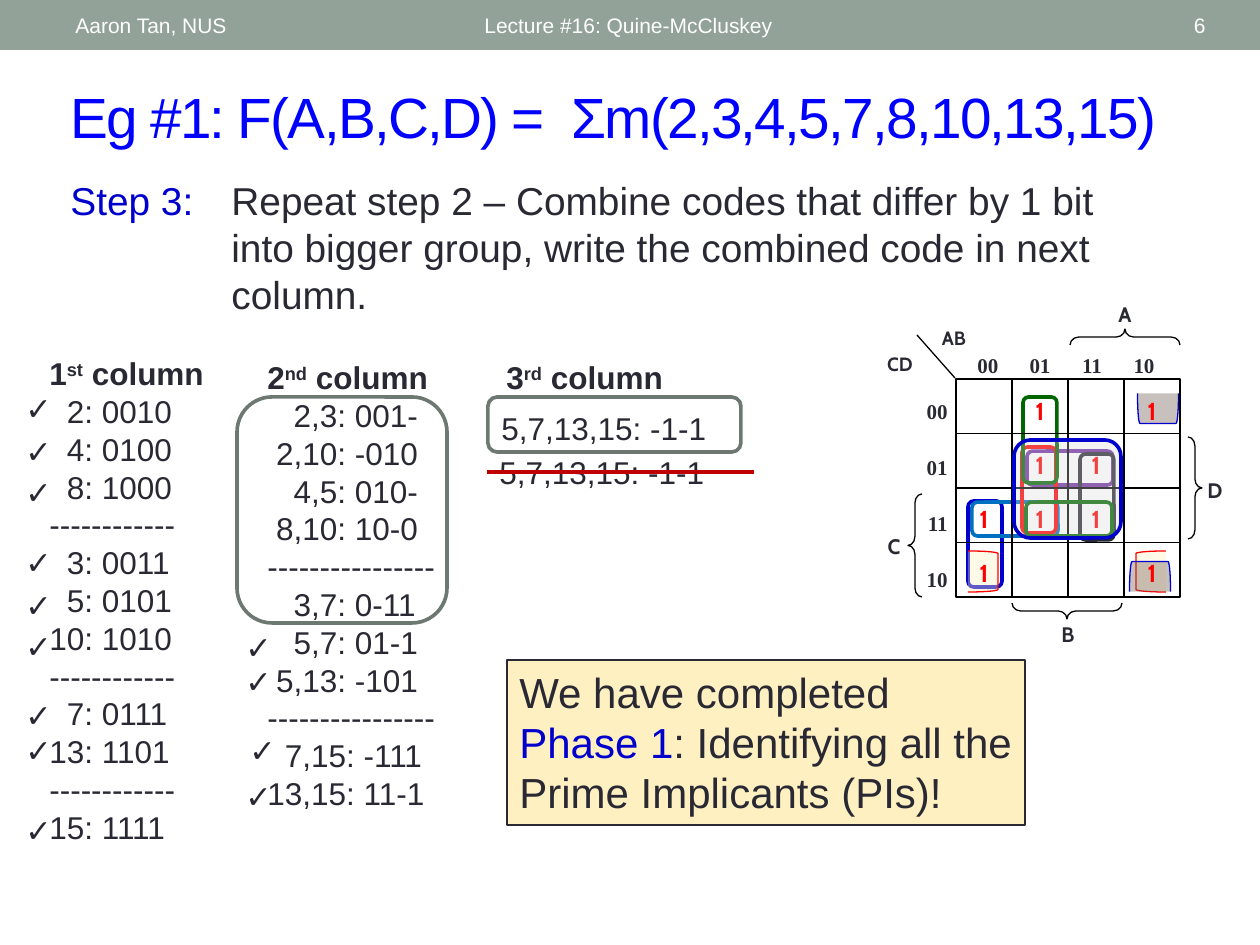
from dataclasses import dataclass

from lxml.etree import SubElement
from pptx import Presentation
from pptx.dml.color import RGBColor
from pptx.enum.shapes import MSO_CONNECTOR, MSO_SHAPE
from pptx.enum.text import MSO_ANCHOR, PP_ALIGN
from pptx.oxml.ns import qn
from pptx.util import Emu, Pt

PX_PER_INCH = 126


@dataclass(frozen=True)
class Theme:
    ink: str = "292934"
    header: str = "93A299"
    white: str = "FFFFFF"
    black: str = "000000"
    title: str = "0000FF"
    accent: str = "0000CC"
    red: str = "FF0000"
    strike: str = "C00000"
    green: str = "006600"
    sky: str = "0070C0"
    purple: str = "7030A0"
    frame: str = "6D7871"
    cream: str = "FFF0C2"
    brown: str = "6C5B52"
    pale: str = "D9D9D9"
    font: str = "Arial"
    map_font: str = "Cabin"
    code_font: str = "Times New Roman"
    title_size: float = 32.4
    callout_size: float = 24
    step_size: float = 22.2
    body_size: float = 18
    one_size: float = 14
    small_size: float = 12
    tiny_size: float = 11
    thin: float = 0.75
    loop: float = 2.08
    thick: float = 2.25


THEME = Theme()


def px(value):
    return Emu(round(value * 914400 / PX_PER_INCH))


def fill_text(frame, paragraphs, font=THEME.font, size=THEME.body_size, color=THEME.ink,
              bold=False, align=PP_ALIGN.LEFT, anchor=MSO_ANCHOR.TOP, indents=(), hanging=0,
              spacing=None):
    """Each paragraph is a string or a list of (text, run overrides)."""
    frame.word_wrap = True
    frame.vertical_anchor = anchor
    for index, content in enumerate(paragraphs):
        paragraph = frame.paragraphs[0] if index == 0 else frame.add_paragraph()
        paragraph.alignment = align
        properties = paragraph._p.get_or_add_pPr()
        if hanging:
            properties.set("marL", str(px(hanging)))
            properties.set("indent", str(-px(hanging)))
        elif indents:
            properties.set("marL", str(Pt(indents[index])))
        runs = [(content, {})] if isinstance(content, str) else content
        for words, override in runs:
            run = paragraph.add_run()
            run.text = words
            run.font.name = font
            run.font.size = Pt(size)
            run.font.bold = override.get("bold", bold)
            run.font.color.rgb = RGBColor.from_string(override.get("color", color))
            if "baseline" in override:
                run._r.get_or_add_rPr().set("baseline", str(override["baseline"]))
            if spacing is not None:
                run._r.get_or_add_rPr().set("spc", str(spacing))


def add_text(shapes, box, *paragraphs, **text_format):
    shape = shapes.add_textbox(*map(px, box))
    fill_text(shape.text_frame, paragraphs, **text_format)
    return shape


def add_figure(shapes, kind, box, line=None, width=THEME.thin, fill=None, opacity=100,
               rotation=0, flip=None, adjust=None):
    shape = shapes.add_shape(kind, *map(px, box))
    shape.shadow.inherit = False
    shape.rotation = rotation
    if flip:
        shape._element.spPr.xfrm.set(flip, "1")
    if adjust is not None:
        shape.adjustments[0] = adjust
    if fill:
        shape.fill.solid()
        shape.fill.fore_color.rgb = RGBColor.from_string(fill)
        if opacity < 100:
            color = shape._element.spPr.find(".//" + qn("a:srgbClr"))
            SubElement(color, qn("a:alpha")).set("val", str(opacity * 1000))
    else:
        shape.fill.background()
    if line:
        shape.line.color.rgb = RGBColor.from_string(line)
        shape.line.width = Pt(width)
    else:
        shape.line.fill.background()
    return shape


def add_line(shapes, start, end, color=THEME.black, width=THEME.thin, joined=None, sites=None):
    line = shapes.add_connector(MSO_CONNECTOR.STRAIGHT, *map(px, (*start, *end)))
    line.line.color.rgb = RGBColor.from_string(color)
    line.line.width = Pt(width)
    SubElement(line._element.spPr, qn("a:effectLst"))
    if joined is not None:
        line.begin_connect(joined, sites[0])
        line.end_connect(joined, sites[1])


def add_loop(shapes, box, color, **figure_format):
    add_figure(shapes, MSO_SHAPE.ROUNDED_RECTANGLE, box, color, THEME.loop, **figure_format)


def add_column(shapes, box, number, suffix, rows=()):
    """Rows are (lead in half digits, text); half a digit is 5 pt wide."""
    heading = [(number, {"bold": True}), (suffix, {"bold": True, "baseline": 30000}),
               (" column", {"bold": True})]
    add_text(shapes, box, heading, *[words for _, words in rows],
             indents=[0] + [5 * lead for lead, _ in rows])


def add_map_loops(shapes):
    bracket = MSO_SHAPE.LEFT_BRACKET
    add_loop(shapes, (968, 501, 34, 86), THEME.accent)
    add_figure(shapes, bracket, (968, 551, 30, 41), THEME.red, fill=THEME.cream, opacity=38,
               flip="flipH")
    for box, color, rotation in (((998, 476, 34, 86), THEME.sky, 270),
                                 ((1053, 425, 34, 86), THEME.purple, 270),
                                 ((1022, 447, 34, 86), THEME.red, 0),
                                 ((1023, 397, 34, 86), THEME.green, 0),
                                 ((1080, 454, 34, 86), THEME.ink, 0)):
        add_loop(shapes, box, color, rotation=rotation)
    add_figure(shapes, bracket, (1136, 551, 30, 41), THEME.red, fill=THEME.cream, opacity=38)
    add_figure(shapes, bracket, (1135, 556, 30, 41), THEME.accent, fill=THEME.brown,
               opacity=38, rotation=90)
    add_figure(shapes, bracket, (1143, 388, 30, 41), THEME.accent, fill=THEME.brown,
               opacity=38, rotation=270, flip="flipV")


def add_karnaugh_map(shapes):
    left, top, cell, side, height = 956, 379, 56, 224, 218
    grid = add_figure(shapes, MSO_SHAPE.RECTANGLE, (left, top, side, height), THEME.black)
    for step in (1, 2, 3):
        x, y = left + cell * step, top + height * step / 4
        middle = grid if step == 2 else None
        add_line(shapes, (left, y), (left + side, y), joined=middle, sites=(1, 3))
        add_line(shapes, (x, top), (x, top + height), joined=middle, sites=(0, 2))
    add_line(shapes, (955, 378), (917, 335))

    # Codes along the two axes
    for index, code in enumerate(("00", "01", "11", "10")):
        code_format = dict(font=THEME.code_font, size=THEME.small_size, bold=True)
        add_text(shapes, (960 + 52 * index, 346, 56, 36), code, align=PP_ALIGN.CENTER,
                 **code_format)
        add_text(shapes, (911, 392 + 56 * index, 49, 36), code, align=PP_ALIGN.RIGHT,
                 **code_format)

    # Variable names and their braces
    label_format = dict(font=THEME.map_font, bold=True, align=PP_ALIGN.CENTER)
    for name, box, size in (("A", (1104, 295, 42, 34), THEME.small_size),
                            ("B", (1047, 615, 42, 34), THEME.small_size),
                            ("C", (873, 527, 42, 44), THEME.small_size),
                            ("D", (1194, 471, 42, 44), THEME.small_size),
                            ("AB", (922, 320, 64, 36), THEME.tiny_size),
                            ("CD", (861, 346, 78, 36), THEME.tiny_size)):
        add_text(shapes, box, name, size=size, **label_format)
    for box, rotation, flip, adjust in (((1117, 282, 16, 110), 90, "flipV", 0.54),
                                        ((1059, 556, 16, 110), 270, None, 0.54),
                                        ((908, 494, 14, 103), 0, None, 0.64),
                                        ((1188, 437, 14, 102), 0, "flipH", 0.64)):
        add_figure(shapes, MSO_SHAPE.LEFT_BRACE, box, THEME.black, rotation=rotation,
                   flip=flip, adjust=adjust)

    # Minterms, as (column, row)
    for column, row in ((1, 0), (3, 0), (1, 1), (2, 1), (0, 2), (1, 2), (2, 2), (0, 3), (3, 3)):
        add_text(shapes, (left + cell * column, 390 + 54 * row, cell, 44), "1",
                 size=THEME.one_size, color=THEME.red, **label_format)


def main():
    presentation = Presentation()
    presentation.slide_width, presentation.slide_height = px(1260), px(945)
    slide = presentation.slides.add_slide(presentation.slide_layouts[6])
    shapes = slide.shapes

    # Header band
    add_figure(shapes, MSO_SHAPE.RECTANGLE, (0, 0, 1260, 50), fill=THEME.header)
    for words, left, width, align in (("Aaron Tan, NUS", 63, 399, PP_ALIGN.LEFT),
                                      ("Lecture #16: Quine-McCluskey", 472, 567, PP_ALIGN.LEFT),
                                      ("6", 1099, 119, PP_ALIGN.RIGHT)):
        add_text(shapes, (left, 3, width, 45), words, size=THEME.small_size,
                 color=THEME.white, align=align, anchor=MSO_ANCHOR.MIDDLE)

    # Title and step
    add_text(shapes, (58, 72, 1160, 88), "Eg #1: F(A,B,C,D) =  Σm(2,3,4,5,7,8,10,13,15)",
             size=THEME.title_size, color=THEME.title, anchor=MSO_ANCHOR.MIDDLE, spacing=-100)
    add_text(shapes, (58, 171, 1105, 137),
             [("Step 3:", {"color": THEME.accent}),
              ("\tRepeat step 2 – Combine codes that differ by 1 bit into bigger group, "
               "write the combined code in next column.", {})],
             size=THEME.step_size, hanging=161)

    # Karnaugh map
    add_map_loops(shapes)
    add_karnaugh_map(shapes.add_group_shape().shapes)
    add_loop(shapes, (1052, 476, 34, 86), THEME.green, rotation=270)
    add_loop(shapes, (1014, 440, 107, 98), THEME.accent, fill=THEME.pale, opacity=30)

    # Code columns
    add_column(shapes, (37, 348, 189, 509), "1", "st",
               [(2, "2: 0010"), (2, "4: 0100"), (2, "8: 1000"), (0, "-" * 12),
                (2, "3: 0011"), (2, "5: 0101"), (0, "10: 1010"), (0, "-" * 12),
                (2, "7: 0111"), (0, "13: 1101"), (0, "-" * 12), (0, "15: 1111")])
    add_column(shapes, (255, 352, 208, 471), "2", "nd",
               [(3, "2,3: 001-"), (1, "2,10: -010"), (3, "4,5: 010-"), (1, "8,10: 10-0"),
                (0, "-" * 16), (3, "3,7: 0-11"), (3, "5,7: 01-1"), (1, "5,13: -101"),
                (0, "-" * 16), (2, "7,15: -111"), (0, "13,15: 11-1")])
    add_column(shapes, (494, 352, 208, 50), "3", "rd")
    add_text(shapes, (489, 403, 267, 50), "5,7,13,15: -1-1")
    repeated = add_text(shapes, (487, 447, 267, 50), "5,7,13,15: -1-1")
    add_line(shapes, (487, 472), (754, 472), THEME.strike, THEME.thick, repeated, (1, 3))

    # Ticks for the codes already combined
    first_ticks = [(13, top) for top in (383, 426, 467, 537, 580, 621, 690, 725, 805)]
    second_ticks = [(233, 622), (233, 656), (237, 725), (233, 771)]
    for left, top in first_ticks + second_ticks:
        add_text(shapes, (left, top, 42, 50), "✓")

    # Prime implicant frames
    add_loop(shapes, (237, 397, 210, 226), THEME.frame)
    add_loop(shapes, (488, 397, 253, 55), THEME.frame)

    # Conclusion
    callout = add_figure(shapes, MSO_SHAPE.RECTANGLE, (507, 660, 518, 165), THEME.ink,
                         fill=THEME.cream)
    fill_text(callout.text_frame,
              [[("We have completed ", {}), ("Phase 1", {"color": THEME.accent}),
                (": Identifying all the Prime Implicants (PIs)!", {})]],
              size=THEME.callout_size)

    presentation.save("out.pptx")


if __name__ == "__main__":
    main()
